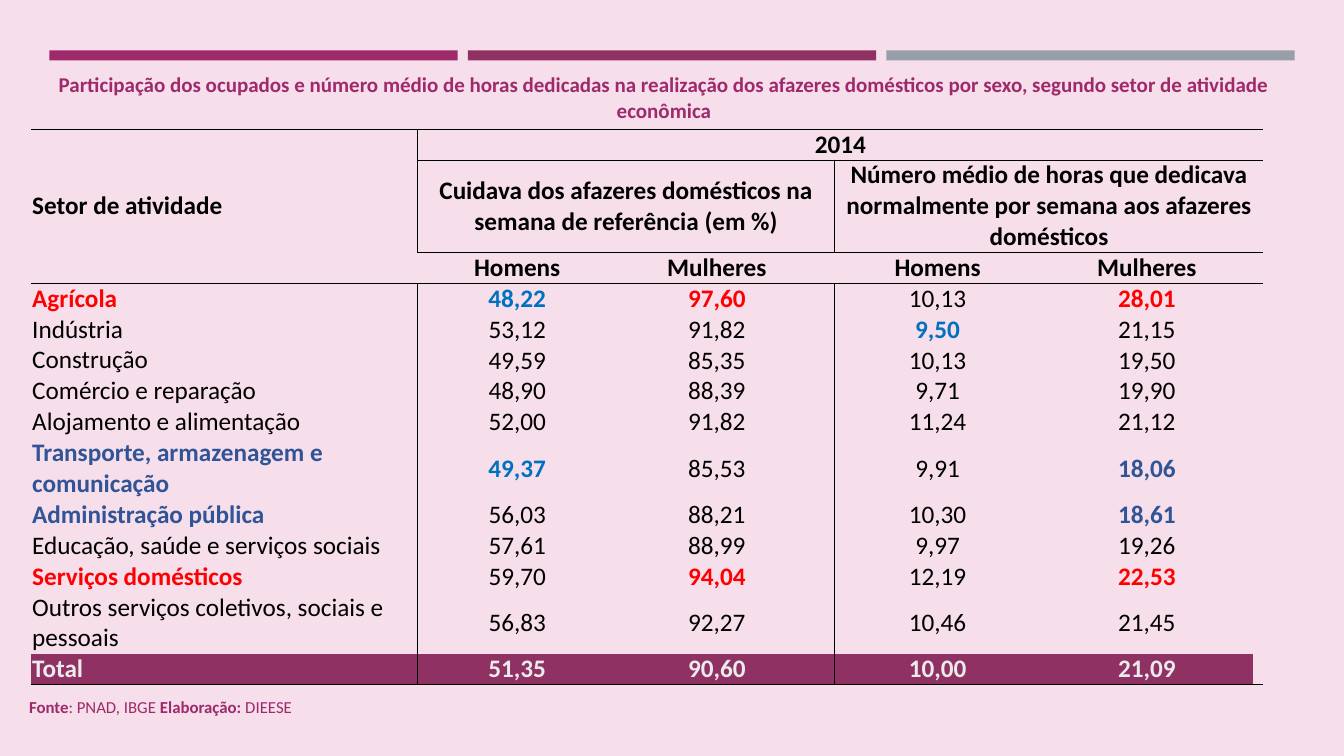
from lxml import etree
from pptx import Presentation
from pptx import util as u
from pptx.dml.color import RGBColor
from pptx.enum import shapes, text
from pptx.oxml.ns import qn

COLORS = {"bg": "F6DEEB", "magenta": "9E296B", "plum": "903163", "gray": "969FA7",
          "black": "000000", "red": "FF0000", "blue": "0070C0", "navy": "305496",
          "light": "EBEBEB"}
NO_STYLE = "{2D5ABB26-0587-4C30-8999-92F81FD0307C}"

TITLE = ("Participação dos ocupados e número médio de horas dedicadas na realização "
         "dos afazeres domésticos por sexo, segundo setor de atividade econômica")
TITLE_WIDTHS = [4.37, 1.33, 1.29, 1.38, 1.68, 1.69, 1.69]
SOURCE = [("Fonte", True), (": PNAD, IBGE ", False), ("Elaboração: ", True), ("DIEESE", False)]

# Header: (row, column, last row, last column, text)
HEADER = [
    (0, 0, 2, 0, "Setor de atividade"),
    (0, 1, 0, 6, "2014"),
    (1, 1, 1, 3, "Cuidava dos afazeres domésticos na semana de referência (em %)"),
    (1, 4, 1, 6, "Número médio de horas que dedicava normalmente por semana aos afazeres domésticos"),
    (2, 1, 2, 1, "Homens"), (2, 2, 2, 2, "Mulheres"),
    (2, 4, 2, 4, "Homens"), (2, 5, 2, 5, "Mulheres"),
]
SECTORS = [
    ("Agrícola", "48,22", "97,60", "10,13", "28,01"),
    ("Indústria", "53,12", "91,82", "9,50", "21,15"),
    ("Construção", "49,59", "85,35", "10,13", "19,50"),
    ("Comércio e reparação", "48,90", "88,39", "9,71", "19,90"),
    ("Alojamento e alimentação", "52,00", "91,82", "11,24", "21,12"),
    ("Transporte, armazenagem e comunicação", "49,37", "85,53", "9,91", "18,06"),
    ("Administração pública", "56,03", "88,21", "10,30", "18,61"),
    ("Educação, saúde e serviços sociais", "57,61", "88,99", "9,97", "19,26"),
    ("Serviços domésticos", "59,70", "94,04", "12,19", "22,53"),
    ("Outros serviços coletivos, sociais e pessoais", "56,83", "92,27", "10,46", "21,45"),
    ("Total", "51,35", "90,60", "10,00", "21,09"),
]
# Bold coloured cells, by (sector, value position)
HIGHLIGHTS = {
    "red": [(0, 0), (0, 2), (0, 4), (8, 0), (8, 2), (8, 4)],
    "blue": [(0, 1), (1, 3), (5, 1)],
    "navy": [(5, 0), (5, 4), (6, 0), (6, 4)],
    "light": [(10, i) for i in range(5)],
}
MARKED = {pos: color for color, cells in HIGHLIGHTS.items() for pos in cells}

COL_WIDTHS = [3.83, 1.98, 1.98, 0.18, 2.04, 2.11, 0.1]
LINE = 22.1 / 72  # height of a one-line row
ROW_HEIGHTS = [LINE, 0.91] + [LINE] * 6 + [0.61] + [LINE] * 3 + [0.61, LINE, 0.3, 0.3]
VALUE_COLS = [0, 1, 2, 4, 5]
FIRST, TOTAL = 3, 13


def rule_left(r, c):
    return r <= TOTAL and r != 2 and (c == 1 or c == 4 and r > 0)


def rule_above(r, c):
    return r in (0, FIRST, TOTAL + 1) or r in (1, 2) and c > 0


class Deck:
    font = "Calibri"

    def __init__(self, prs):
        self.s = prs.slides.add_slide(prs.slide_layouts[6])
        self.fill(self.s.background, "bg")

    def fill(self, target, color):
        target.fill.solid()
        target.fill.fore_color.rgb = RGBColor.from_string(COLORS[color])

    def style(self, p, size, color, bold=None, align=text.PP_ALIGN.LEFT):
        p.alignment = align
        p.font.name, p.font.size, p.font.bold = self.font, u.Pt(size), bold
        p.font.color.rgb = RGBColor.from_string(COLORS[color])

    def bar(self, x, y, w, h, color):
        sp = self.s.shapes.add_shape(shapes.MSO_SHAPE.RECTANGLE, *map(u.Inches, (x, y, w, h)))
        sp.shadow.inherit = False
        sp.line.fill.background()
        self.fill(sp, color)

    def note(self, x, y, w, h, parts):
        tf = self.s.shapes.add_textbox(*map(u.Inches, (x, y, w, h))).text_frame
        tf.word_wrap = True
        p = tf.paragraphs[0]
        self.style(p, 12, "magenta")
        for words, bold in parts:
            r = p.add_run()
            r.text, r.font.bold = words, bold

    def table(self, x, y, widths, heights):
        frame = self.s.shapes.add_table(len(heights), len(widths), u.Inches(x), u.Inches(y),
                                        u.Inches(sum(widths)), u.Inches(sum(heights)))
        tbl = frame.table
        tbl.first_row = tbl.horz_banding = False
        frame._element.find(".//" + qn("a:tableStyleId")).text = NO_STYLE
        for col, w in zip(tbl.columns, widths):
            col.width = u.Inches(w)
        for row, h in zip(tbl.rows, heights):
            row.height = u.Inches(h)
        for cell in tbl.iter_cells():
            cell.margin_left = cell.margin_right = u.Inches(0.01)
            cell.margin_top = cell.margin_bottom = 0
            self.style(cell.text_frame.paragraphs[0], 18, "black")
        return tbl

    def cell(self, cell, words, color="black", bold=False, centered=True,
             anchor=text.MSO_ANCHOR.MIDDLE, size=18):
        cell.text = words
        cell.vertical_anchor = anchor
        p = cell.text_frame.paragraphs[0]
        self.style(p, size, color, bold,
                   text.PP_ALIGN.CENTER if centered else text.PP_ALIGN.LEFT)
        return p

    def borders(self, cell, **sides):
        for side, drawn in sides.items():
            ln = etree.SubElement(cell._tc.get_or_add_tcPr(), qn("a:ln" + side), w=str(u.Pt(0.5)))
            if drawn:
                solid = etree.SubElement(ln, qn("a:solidFill"))
                etree.SubElement(solid, qn("a:srgbClr"), val=COLORS["black"])
            else:
                etree.SubElement(ln, qn("a:noFill"))


def main():
    prs = Presentation()
    prs.slide_width, prs.slide_height = u.Inches(13.33), u.Inches(7.5)
    deck = Deck(prs)

    # Top bars
    for i, color in enumerate(["magenta", "plum", "gray"]):
        deck.bar(0.49 + 4.15 * i, 0.5, 4.05, 0.1, color)

    # Title table: one merged, indented line above an empty row
    heading = deck.table(-0.63, 0.64, TITLE_WIDTHS, [0.59, 0.39])
    heading.cell(0, 0).merge(heading.cell(0, 6))
    p = deck.cell(heading.cell(0, 0), TITLE, "magenta", True,
                  anchor=text.MSO_ANCHOR.BOTTOM, size=15)
    p.level, p.space_after = 2, u.Pt(12)
    p._p.get_or_add_pPr().set("marL", str(u.Inches(1)))
    p._p.get_or_add_pPr().set("indent", "0")
    for cell in heading.iter_cells():
        cell.fill.background()

    # Table header
    tbl = deck.table(0.31, 1.28, COL_WIDTHS, ROW_HEIGHTS)
    for r, c, last_r, last_c, words in HEADER:
        if (r, c) != (last_r, last_c):
            tbl.cell(r, c).merge(tbl.cell(last_r, last_c))
        deck.cell(tbl.cell(r, c), words, bold=True, centered=c > 0)

    # Sector rows
    for i, sector in enumerate(SECTORS):
        for j, (c, words) in enumerate(zip(VALUE_COLS, sector)):
            color = MARKED.get((i, j), "black")
            anchor = text.MSO_ANCHOR.MIDDLE if j else text.MSO_ANCHOR.TOP
            deck.cell(tbl.cell(FIRST + i, c), words, color, color != "black", j > 0, anchor)

    # Rules and fills
    for r in range(len(ROW_HEIGHTS)):
        for c in range(len(COL_WIDTHS)):
            cell = tbl.cell(r, c)
            deck.borders(cell, L=rule_left(r, c), R=rule_left(r, c + cell.span_width),
                         T=rule_above(r, c), B=rule_above(r + cell.span_height, c))
            if r == TOTAL and c < 6:
                deck.fill(cell, "plum")
            else:
                cell.fill.background()

    # Source note
    deck.note(0.19, 6.86, 4.57, 0.3, SOURCE)
    prs.save("out.pptx")


if __name__ == "__main__":
    main()
